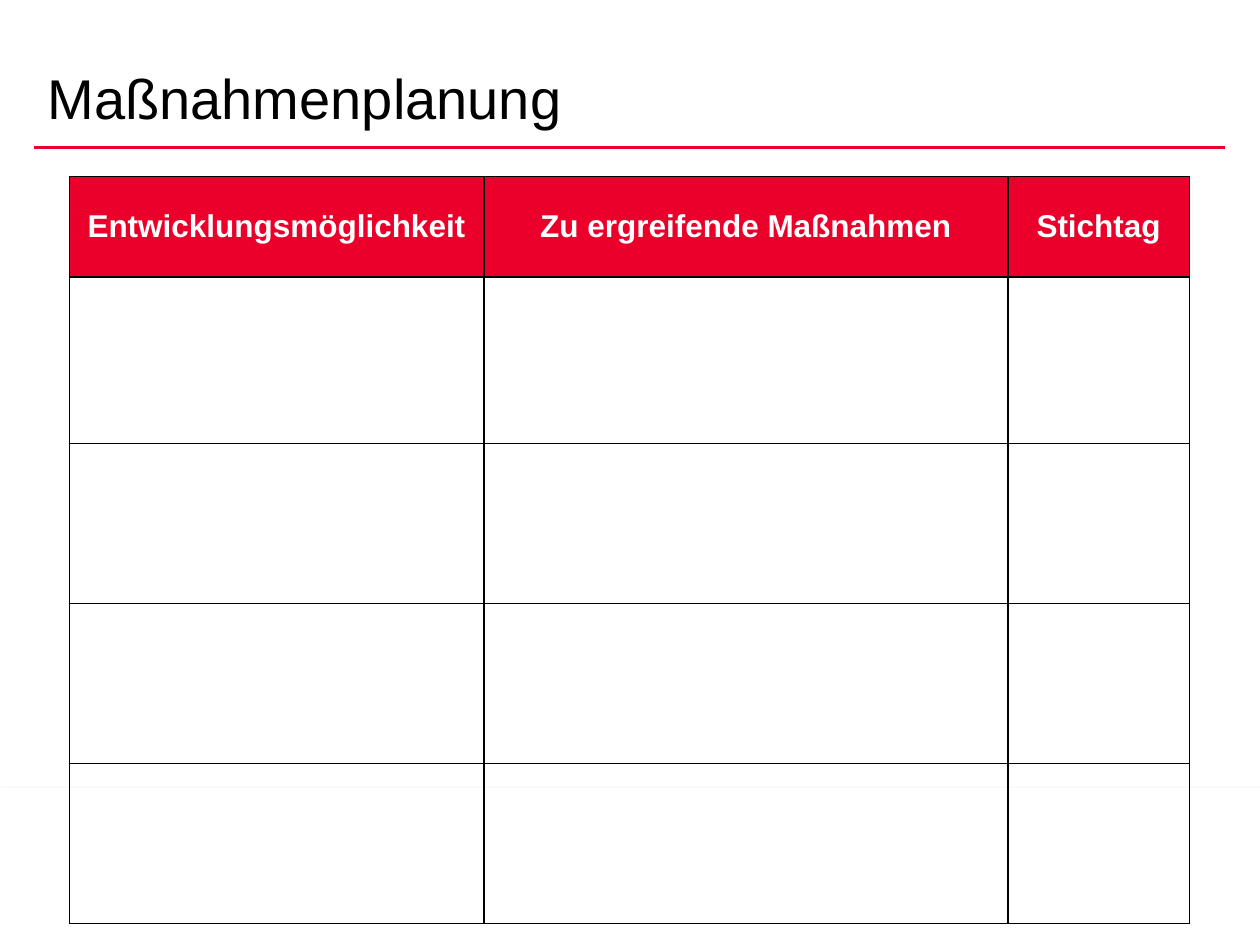
from lxml import etree
from pptx import Presentation
from pptx.dml.color import RGBColor
from pptx.enum.shapes import MSO_CONNECTOR, MSO_SHAPE
from pptx.enum.text import MSO_ANCHOR, PP_ALIGN
from pptx.oxml import parse_xml
from pptx.oxml.ns import nsdecls, qn
from pptx.util import Inches, Pt

STRAIGHT = MSO_CONNECTOR.STRAIGHT
RECTANGLE = MSO_SHAPE.RECTANGLE
BOTTOM, MIDDLE = MSO_ANCHOR.BOTTOM, MSO_ANCHOR.MIDDLE
CENTER = PP_ALIGN.CENTER

FONT = "Arial"
COLORS = {"red": "EA002A", "black": "000000", "white": "FFFFFF"}
HEADERS = ["Entwicklungsmöglichkeit", "Zu ergreifende Maßnahmen", "Stichtag"]
COLUMN_WIDTHS = [3.29, 4.16, 1.44]
ROW_HEIGHTS = [0.8, 1.32, 1.27, 1.27, 1.27]


def color(name):
    return RGBColor.from_string(COLORS[name])


def style_font(paragraph, size, color_name, bold=False):
    font = paragraph.font
    font.name = FONT
    font.size = Pt(size)
    font.bold = bold
    font.color.rgb = color(color_name)


def add_footer_band(slide):
    """Add the white band whose soft shadow shows along its upper edge."""
    band = slide.shapes.add_shape(
        RECTANGLE, Inches(0), Inches(6.26), Inches(10), Inches(1.24))
    band.fill.solid()
    band.fill.fore_color.rgb = color("white")
    band.line.color.rgb = color("white")
    band.line.width = Pt(0.75)
    band._element.spPr.append(parse_xml(
        f'<a:effectLst {nsdecls("a")}>'
        f'<a:outerShdw blurRad="{Pt(3.1)}" dist="{Pt(1.8)}" dir="5400000" rotWithShape="0">'
        f'<a:srgbClr val="{COLORS["black"]}"><a:alpha val="35000"/></a:srgbClr>'
        '</a:outerShdw></a:effectLst>'))


def add_title_rule(slide):
    rule = slide.shapes.add_connector(
        STRAIGHT, Inches(0.27), Inches(1.17), Inches(9.72), Inches(1.17))
    rule.line.color.rgb = color("red")
    rule.line.width = Pt(2)
    etree.SubElement(rule._element.spPr, qn("a:effectLst"))


def add_title(slide, text):
    box = slide.shapes.add_textbox(
        Inches(0.28), Inches(0.05), Inches(9), Inches(1.03))
    frame = box.text_frame
    frame.word_wrap = True
    frame.vertical_anchor = BOTTOM
    paragraph = frame.paragraphs[0]
    paragraph.text = text
    paragraph.line_spacing = 0.8
    style_font(paragraph, 32, "black")


def add_borders(cell):
    properties = cell._tc.get_or_add_tcPr()
    for index, side in enumerate(("lnL", "lnR", "lnT", "lnB")):
        properties.insert(index, parse_xml(
            f'<a:{side} {nsdecls("a")} w="{Pt(1)}"><a:solidFill>'
            f'<a:srgbClr val="{COLORS["black"]}"/></a:solidFill></a:{side}>'))


def add_plan_table(slide):
    table = slide.shapes.add_table(
        len(ROW_HEIGHTS), len(COLUMN_WIDTHS), Inches(0.55), Inches(1.4),
        Inches(sum(COLUMN_WIDTHS)), Inches(sum(ROW_HEIGHTS))).table
    table.first_row = False
    table.horz_banding = False
    for column, width in zip(table.columns, COLUMN_WIDTHS):
        column.width = Inches(width)
    for row, height in zip(table.rows, ROW_HEIGHTS):
        row.height = Inches(height)
    for cell in table.iter_cells():
        cell.fill.background()
        add_borders(cell)
    for cell, header in zip(table.rows[0].cells, HEADERS):
        cell.fill.solid()
        cell.fill.fore_color.rgb = color("red")
        cell.vertical_anchor = MIDDLE
        paragraph = cell.text_frame.paragraphs[0]
        paragraph.text = header
        paragraph.alignment = CENTER
        style_font(paragraph, 18, "white", bold=True)


def main():
    presentation = Presentation()
    presentation.slide_width = Inches(10)
    presentation.slide_height = Inches(7.5)
    slide = presentation.slides.add_slide(presentation.slide_layouts[6])
    add_footer_band(slide)
    add_title_rule(slide)
    add_title(slide, "Maßnahmenplanung")
    add_plan_table(slide)
    presentation.save("out.pptx")


if __name__ == "__main__":
    main()
